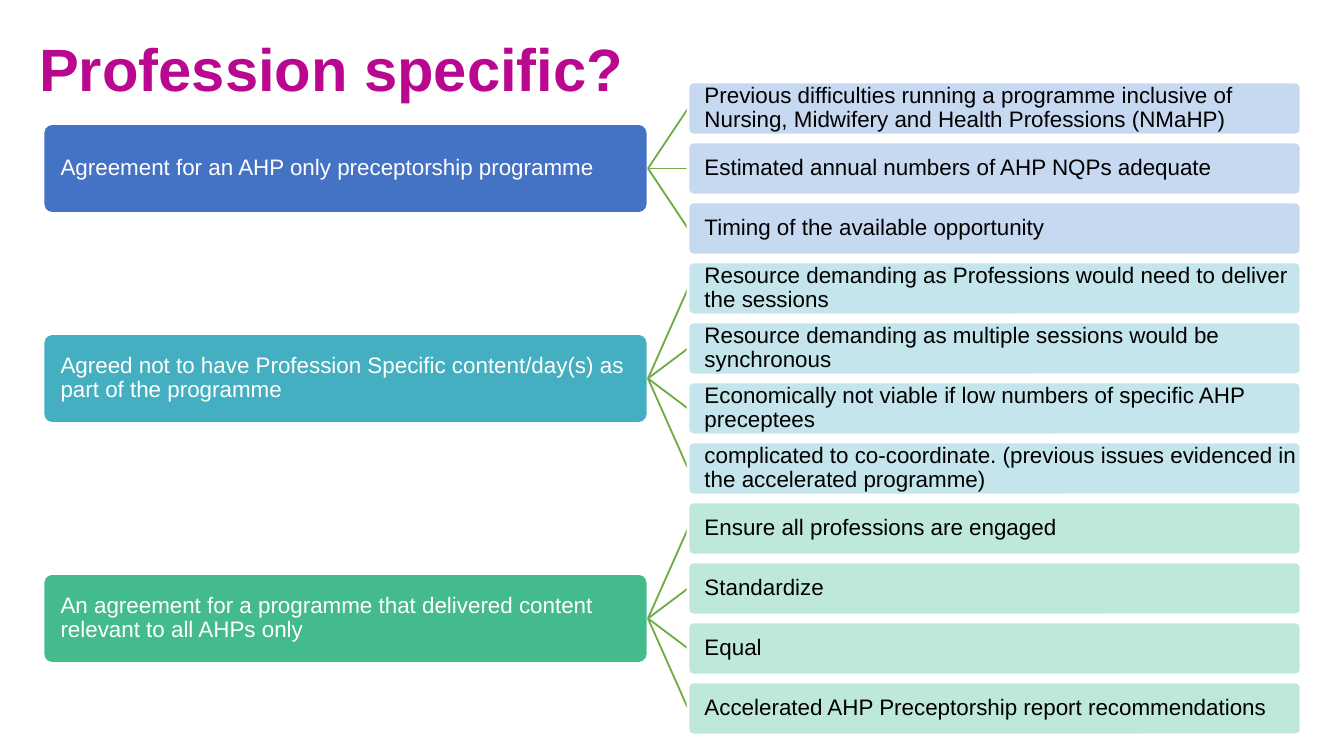
from lxml import etree
from pptx import Presentation
from pptx import util as u
from pptx.dml.color import RGBColor
from pptx.enum import shapes, text
from pptx.oxml.ns import qn

PX = 914400 / 134.4  # EMU per px
COLORS = {
    "title": "BA0790", "white": "FFFFFF", "black": "000000", "link": "70AD47",
    "blue": "4472C4", "pale_blue": "C6D9F1",
    "teal": "43AFC0", "pale_teal": "C3E5EB",
    "green": "43BB8D", "pale_green": "BEE8D8",
}
HEAD_H, ITEM_H, PITCH = 90, 53, 60
HEAD_W, GAP = 605, 40

GROUPS = [
    ("blue", "Agreement for an AHP only preceptorship programme", [
        "Previous difficulties running a programme inclusive of Nursing, "
        "Midwifery and Health Professions (NMaHP)",
        "Estimated annual numbers of AHP NQPs adequate",
        "Timing of the available opportunity",
    ]),
    ("teal", "Agreed not to have Profession Specific content/day(s) as part of the programme", [
        "Resource demanding as Professions would need to deliver the sessions",
        "Resource demanding as multiple sessions would be synchronous",
        "Economically not viable if low numbers of specific AHP preceptees",
        "complicated to co-coordinate. (previous issues evidenced in the accelerated programme)",
    ]),
    ("green", "An agreement for a programme that delivered content relevant to all AHPs only", [
        "Ensure all professions are engaged",
        "Standardize",
        "Equal",
        "Accelerated AHP Preceptorship report recommendations",
    ]),
]


def px(n):
    return u.Emu(round(n * PX))


def rgb(name):
    return RGBColor.from_string(COLORS[name])


def write(sp, words, size, color, bold=False):
    tf = sp.text_frame
    tf.word_wrap = True
    tf.vertical_anchor = text.MSO_ANCHOR.MIDDLE
    p = tf.paragraphs[0]
    p.text = words
    p.alignment = text.PP_ALIGN.LEFT
    p.line_spacing = 0.9
    p.font.name, p.font.size, p.font.bold = "Arial", u.Pt(size), bold
    p.font.color.rgb = rgb(color)
    return tf


def add_title(s, x, y, w, h):
    sp = s.shapes.add_textbox(px(x), px(y), px(w), px(h))
    write(sp, "Profession specific?", 32, "title", bold=True)


def add_box(s, x, y, w, h, words, fill, color):
    sp = s.shapes.add_shape(shapes.MSO_SHAPE.ROUNDED_RECTANGLE, px(x), px(y), px(w), px(h))
    sp.adjustments[0] = 0.1
    sp.shadow.inherit = False
    sp.fill.solid()
    sp.fill.fore_color.rgb = rgb(fill)
    sp.line.color.rgb = rgb("white")
    sp.line.width = u.Pt(1.5)
    tf = write(sp, words, 12, color)
    tf.margin_left = px(15)
    tf.margin_right = tf.margin_top = tf.margin_bottom = px(2)


def add_link(s, x1, y1, x2, y2):
    cx = s.shapes.add_connector(shapes.MSO_CONNECTOR.STRAIGHT, px(x1), px(y1), px(x2), px(y2))
    cx.line.color.rgb = rgb("link")
    cx.line.width = u.Pt(1)
    etree.SubElement(cx._element.spPr, qn("a:effectLst"))


def add_group(s, x, y, w, hue, heading, items):
    """Heading on the left, centred on its column of items."""
    item_x = x + HEAD_W + GAP
    mid = y + ((len(items) - 1) * PITCH + ITEM_H) / 2

    # Heading
    add_box(s, x, mid - HEAD_H / 2, HEAD_W, HEAD_H, heading, hue, "white")

    # Items, each with its link
    for i, item in enumerate(items):
        top = y + i * PITCH
        add_link(s, x + HEAD_W, mid, item_x, top + ITEM_H / 2)
        add_box(s, item_x, top, w - HEAD_W - GAP, ITEM_H, item, "pale_" + hue, "black")


def main():
    prs = Presentation()
    prs.slide_width, prs.slide_height = px(1344), px(756)
    s = prs.slides.add_slide(prs.slide_layouts[6])

    add_title(s, 26, 34, 1318, 77)
    top = 82
    for hue, heading, items in GROUPS:
        add_group(s, 43, top, 1258, hue, heading, items)
        top += len(items) * PITCH

    prs.save("out.pptx")


if __name__ == "__main__":
    main()
